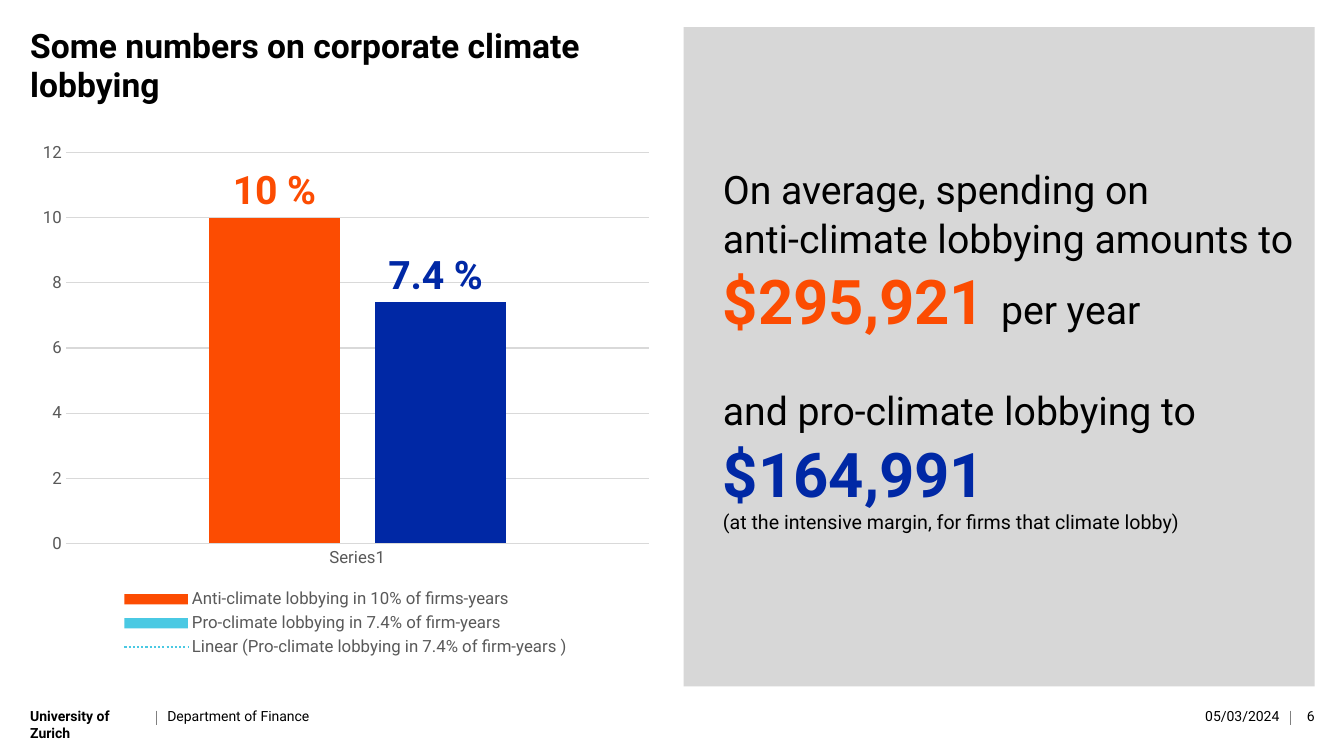
"""Build a slide with numbers on corporate climate lobbying."""
from dataclasses import dataclass

from lxml import etree
from pptx import Presentation
from pptx import util as u
from pptx.chart.data import CategoryChartData
from pptx.dml.color import RGBColor
from pptx.enum import chart as ch
from pptx.enum import shapes, text
from pptx.oxml import parse_xml
from pptx.oxml.ns import nsdecls, qn

FONT = "Roboto"
BLACK = RGBColor(0x00, 0x00, 0x00)
ORANGE = RGBColor(0xFC, 0x4C, 0x02)
BLUE = RGBColor(0x00, 0x28, 0xA5)
CYAN = RGBColor(0x4A, 0xC9, 0xE3)
PANEL = RGBColor(0xD7, 0xD7, 0xD7)
GRID = RGBColor(0xD9, 0xD9, 0xD9)
LABEL = RGBColor(0x59, 0x59, 0x59)
RULE = RGBColor(0x80, 0x80, 0x80)

LEFT, RIGHT, TOP, WIDTH = 0.3, 6.78, 0.27, 6.26
FOOT = 7.03


@dataclass
class Phrase:
    words: str
    size: float = 28
    color: RGBColor = BLACK
    bold: bool = False


@dataclass
class Line:
    phrases: list[Phrase]
    gap: float = 0


@dataclass
class Note:
    words: str
    left: float
    width: float
    align: text.PP_ALIGN = text.PP_ALIGN.LEFT
    bold: bool = False


@dataclass
class Bar:
    name: str
    value: float
    label: str
    fill: RGBColor
    key: RGBColor


LINES = [
    Line([Phrase("On average, spending on")]),
    Line([Phrase("anti-climate lobbying amounts to")]),
    Line([Phrase("$295,921 ", 44, ORANGE, True), Phrase("per year")]),
    Line([Phrase("and pro-climate lobbying to")], 34),
    Line([Phrase("$164,991 \v", 44, BLUE, True),
          Phrase("(at the intensive margin, for firms that climate lobby)", 14)]),
]
NOTES = [
    Note("University of Zurich", LEFT, 1.16, bold=True),
    Note("Department of Finance", 1.66, 8.66),
    Note("05/03/2024", 11.39, 1.3, text.PP_ALIGN.RIGHT),
    Note("6", 12.81, 0.23, text.PP_ALIGN.RIGHT),
]
BARS = [
    Bar("Anti-climate lobbying in 10% of firms-years", 10, "10 %", ORANGE, ORANGE),
    Bar("Pro-climate lobbying in 7.4% of firm-years ", 7.4, "7.4 % ", BLUE, CYAN),
]


def style(font, size: float, color: RGBColor, bold: bool = False) -> None:
    font.name, font.size, font.bold = FONT, u.Pt(size), bold
    font.color.rgb = color


def place(shape, left: float, top: float, width: float, height: float) -> None:
    shape.left, shape.top = u.Inches(left), u.Inches(top)
    shape.width, shape.height = u.Inches(width), u.Inches(height)


def set_frame(frame, top: float = 0) -> None:
    frame.word_wrap = True
    frame.auto_size = text.MSO_AUTO_SIZE.NONE
    frame.vertical_anchor = text.MSO_ANCHOR.TOP
    frame.margin_left = frame.margin_right = frame.margin_bottom = 0
    frame.margin_top = u.Inches(top)


def add_title(slide) -> None:
    title = slide.shapes.title
    place(title, LEFT, TOP, WIDTH, 0.68)
    set_frame(title.text_frame)
    para = title.text_frame.paragraphs[0]
    para.text = "Some numbers on corporate climate lobbying"
    para.alignment, para.line_spacing = text.PP_ALIGN.LEFT, 0.97
    style(para.font, 24, BLACK, True)


def add_panel(slide) -> None:
    panel = slide.placeholders[1]
    place(panel, RIGHT, TOP, WIDTH, 6.54)
    panel.fill.solid()
    panel.fill.fore_color.rgb = PANEL
    frame = panel.text_frame
    set_frame(frame, 1.36)
    for i, line in enumerate(LINES):
        para = frame.add_paragraph() if i else frame.paragraphs[0]
        props = para._p.get_or_add_pPr()
        props.set("marL", str(u.Inches(0.39)))
        props.set("indent", "0")
        etree.SubElement(props, qn("a:buNone"))
        para.line_spacing, para.space_before = 1.03, u.Pt(line.gap)
        for phrase in line.phrases:
            run = para.add_run()
            run.text = phrase.words.rstrip("\v")
            style(run.font, phrase.size, phrase.color, phrase.bold)
            if phrase.words.endswith("\v"):
                para.add_line_break()


def add_note(slide, note: Note) -> None:
    box = slide.shapes.add_textbox(
        u.Inches(note.left), u.Inches(FOOT), u.Inches(note.width), u.Inches(0.16))
    set_frame(box.text_frame)
    para = box.text_frame.paragraphs[0]
    para.text = note.words
    para.alignment, para.line_spacing = note.align, 0.98
    style(para.font, 10, BLACK, note.bold)


def add_rule(slide, left: float) -> None:
    rule = slide.shapes.add_connector(
        shapes.MSO_CONNECTOR.STRAIGHT,
        u.Inches(left), u.Inches(7.05), u.Inches(left), u.Inches(7.19))
    rule.line.color.rgb, rule.line.width = RULE, u.Pt(0.5)
    etree.SubElement(rule._element.spPr, qn("a:effectLst"))


def add_trend(row) -> None:
    trend = parse_xml(
        f'<c:trendline {nsdecls("c", "a")}><c:spPr><a:ln w="{u.Pt(1.5)}">'
        f'<a:solidFill><a:srgbClr val="{CYAN}"/></a:solidFill>'
        '<a:prstDash val="sysDot"/></a:ln></c:spPr>'
        '<c:trendlineType val="linear"/><c:dispRSqr val="0"/>'
        '<c:dispEq val="0"/></c:trendline>')
    row._element.find(qn("c:cat")).addprevious(trend)


def add_bars(slide) -> None:
    data = CategoryChartData()
    data.categories = ["Series1"]
    for bar in BARS:
        data.add_series(bar.name, [bar.value])
    chart = slide.shapes.add_chart(
        ch.XL_CHART_TYPE.COLUMN_CLUSTERED, u.Inches(LEFT), u.Inches(1.31),
        u.Inches(WIDTH), u.Inches(5.25), data).chart
    style(chart.font, 12, LABEL)
    chart.has_title = False
    chart.has_legend = True
    chart.legend.position = ch.XL_LEGEND_POSITION.BOTTOM
    chart.legend.include_in_layout = False
    style(chart.legend.font, 12, LABEL)
    for axis in (chart.category_axis, chart.value_axis):
        axis.major_tick_mark = axis.minor_tick_mark = ch.XL_TICK_MARK.NONE
        style(axis.tick_labels.font, 12, LABEL)
    scale = chart.value_axis
    scale.minimum_scale, scale.maximum_scale, scale.major_unit = 0, 12, 2
    scale.format.line.fill.background()
    for edge in (chart.category_axis.format.line, scale.major_gridlines.format.line):
        edge.color.rgb, edge.width = GRID, u.Pt(0.75)
    plot = chart.plots[0]
    plot.gap_width, plot.overlap, plot.vary_by_categories = 219, -27, False
    for bar, row in zip(BARS, plot.series):
        row.format.fill.solid()
        row.format.fill.fore_color.rgb = bar.key
        point = row.points[0]
        point.format.fill.solid()
        point.format.fill.fore_color.rgb = bar.fill
        para = point.data_label.text_frame.paragraphs[0]
        run = para.add_run()
        run.text = bar.label
        style(run.font, 28, bar.fill, True)
        point.data_label.position = ch.XL_LABEL_POSITION.OUTSIDE_END
    add_trend(plot.series[1])


def main() -> None:
    deck = Presentation()
    deck.slide_width, deck.slide_height = u.Inches(13.33), u.Inches(7.5)
    slide = deck.slides.add_slide(deck.slide_layouts[1])
    add_title(slide)
    add_panel(slide)
    add_bars(slide)
    for note in NOTES:
        add_note(slide, note)
    for left in (1.55, 12.8):
        add_rule(slide, left)
    deck.save("out.pptx")


if __name__ == "__main__":
    main()
